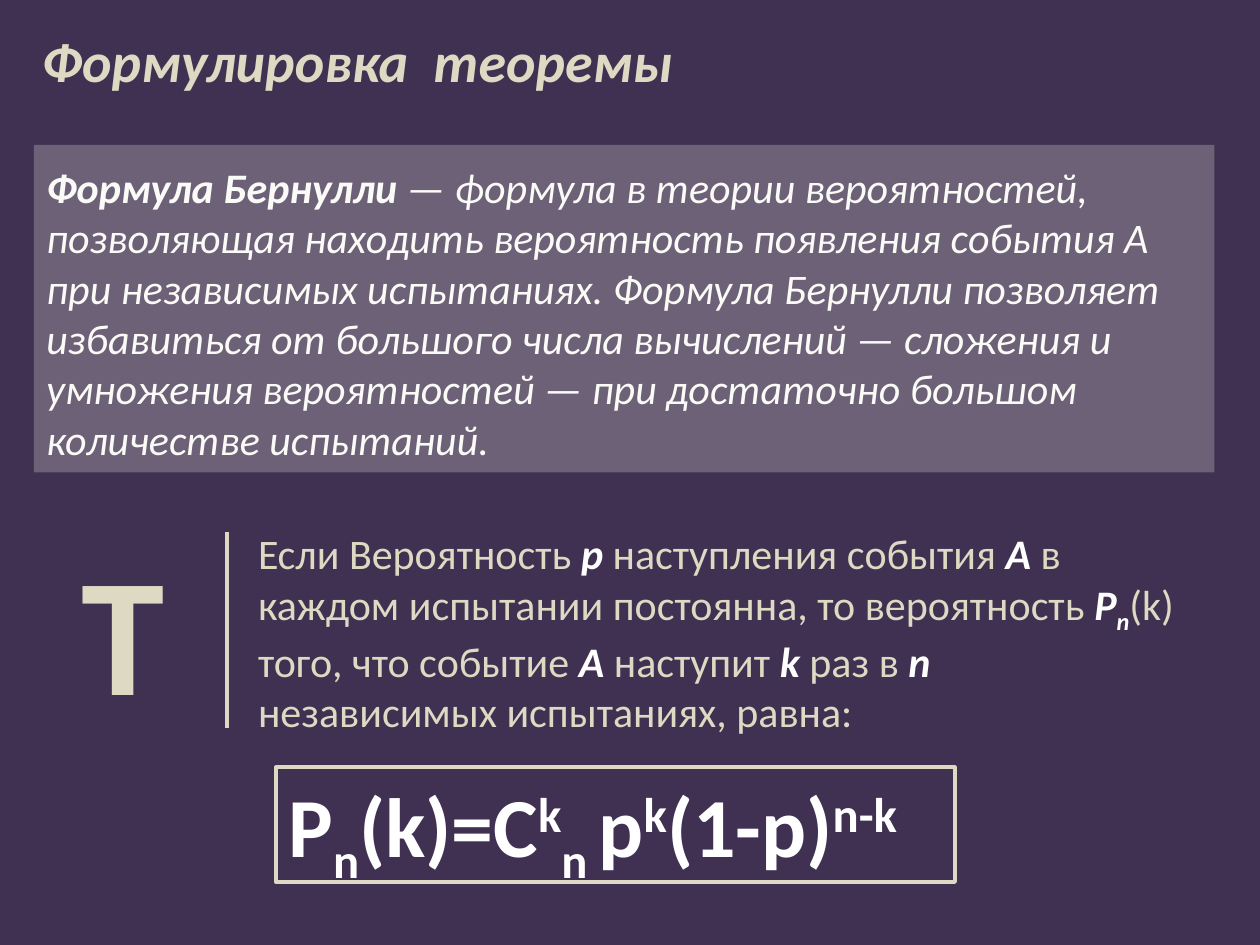
from lxml import etree
from pptx import Presentation
from pptx.dml.color import RGBColor
from pptx.enum import shapes, text
from pptx.oxml import ns
from pptx.util import Pt

SAND, WHITE = "DDD9C3", "FFFFFF"
BASELINES = {"sub": "-25000", "super": "30000"}


def color(target, value):
    target.rgb = RGBColor.from_string(value)


def write(shape, size, value, runs, bold=None, italic=None):
    frame = shape.text_frame
    frame.word_wrap = True
    frame.auto_size = text.MSO_AUTO_SIZE.NONE
    frame.vertical_anchor = text.MSO_ANCHOR.TOP
    paragraph = frame.paragraphs[0]
    paragraph.alignment = text.PP_ALIGN.LEFT
    font = paragraph.font
    font.name, font.size, font.bold, font.italic = "Calibri", Pt(size), bold, italic
    color(font.color, value)
    for content, style in runs:
        run = paragraph.add_run()
        run.text = content
        if "bold" in style:
            run.font.bold = True
        if "symbol" in style:
            run.font.bold = run.font.italic = True
            color(run.font.color, WHITE)
        for name, baseline in BASELINES.items():
            if name in style.split():
                run._r.get_or_add_rPr().set("baseline", baseline)


presentation = Presentation()
presentation.slide_width, presentation.slide_height = Pt(720), Pt(540)
slide = presentation.slides.add_slide(presentation.slide_layouts[5])
slide.background.fill.solid()
color(slide.background.fill.fore_color, "403152")

formula = slide.shapes.add_shape(
    shapes.MSO_SHAPE.RECTANGLE, Pt(157.7), Pt(438.5), Pt(388), Pt(65.5))
formula.shadow.inherit = False
formula.fill.background()
formula.line.width = Pt(2.25)
color(formula.line.color, SAND)
write(formula, 48, WHITE, [
    ("P", ""), ("n", "sub"), ("(k)=C", ""), ("k", "super"), ("n ", "sub"),
    ("p", ""), ("k", "super"), ("(1-p)", ""), ("n-k", "super"),
], bold=True)

theorem = slide.shapes.add_textbox(Pt(140.4), Pt(298), Pt(540), Pt(122.4))
write(theorem, 24, SAND, [
    ("Если Вероятность ", ""), ("p", "symbol"),
    (" наступления события ", ""), ("Α", "symbol"),
    (" в каждом испытании постоянна, то вероятность ", ""),
    ("P", "symbol"), ("n", "symbol sub"),
    ("(k) того, что событие ", ""), ("A", "symbol"),
    (" наступит ", ""), ("k ", "symbol"),
    ("раз в ", ""), ("n ", "symbol"),
    ("независимых испытаниях, равна:", ""),
])

divider = slide.shapes.add_connector(
    shapes.MSO_CONNECTOR.STRAIGHT, Pt(129.6), Pt(304), Pt(129.6), Pt(416))
divider.line.width = Pt(2.25)
color(divider.line.color, SAND)
etree.SubElement(divider._element.spPr, ns.qn("a:effectLst"))

letter = slide.shapes.add_textbox(Pt(39.6), Pt(298), Pt(73.4), Pt(123.8))
write(letter, 96, SAND, [("Т", "")], bold=True)

title = slide.shapes.title
title.left, title.top, title.width, title.height = Pt(16.6), Pt(11.5), Pt(422), Pt(46)
write(title, 32, SAND, [("Формулировка  теоремы", "")], bold=True, italic=True)

definition = slide.shapes.add_textbox(Pt(19.4), Pt(88.6), Pt(675.4), Pt(180))
write(definition, 24, WHITE, [
    ("Формула Бернулли", "bold"),
    (" — формула в теории вероятностей, позволяющая находить вероятность "
     "появления события A при независимых испытаниях. Формула Бернулли "
     "позволяет избавиться от большого числа вычислений — сложения и "
     "умножения вероятностей — при достаточно большом количестве испытаний.", ""),
], italic=True)

panel = slide.shapes.add_shape(
    shapes.MSO_SHAPE.RECTANGLE, Pt(19.4), Pt(82.8), Pt(674.6), Pt(187.2))
panel.shadow.inherit = False
panel.line.fill.background()
panel.fill.solid()
color(panel.fill.fore_color, "EEECE1")
tint = panel._element.spPr.find(".//" + ns.qn("a:srgbClr"))
etree.SubElement(tint, ns.qn("a:alpha"), val="26000")

presentation.save("out.pptx")
